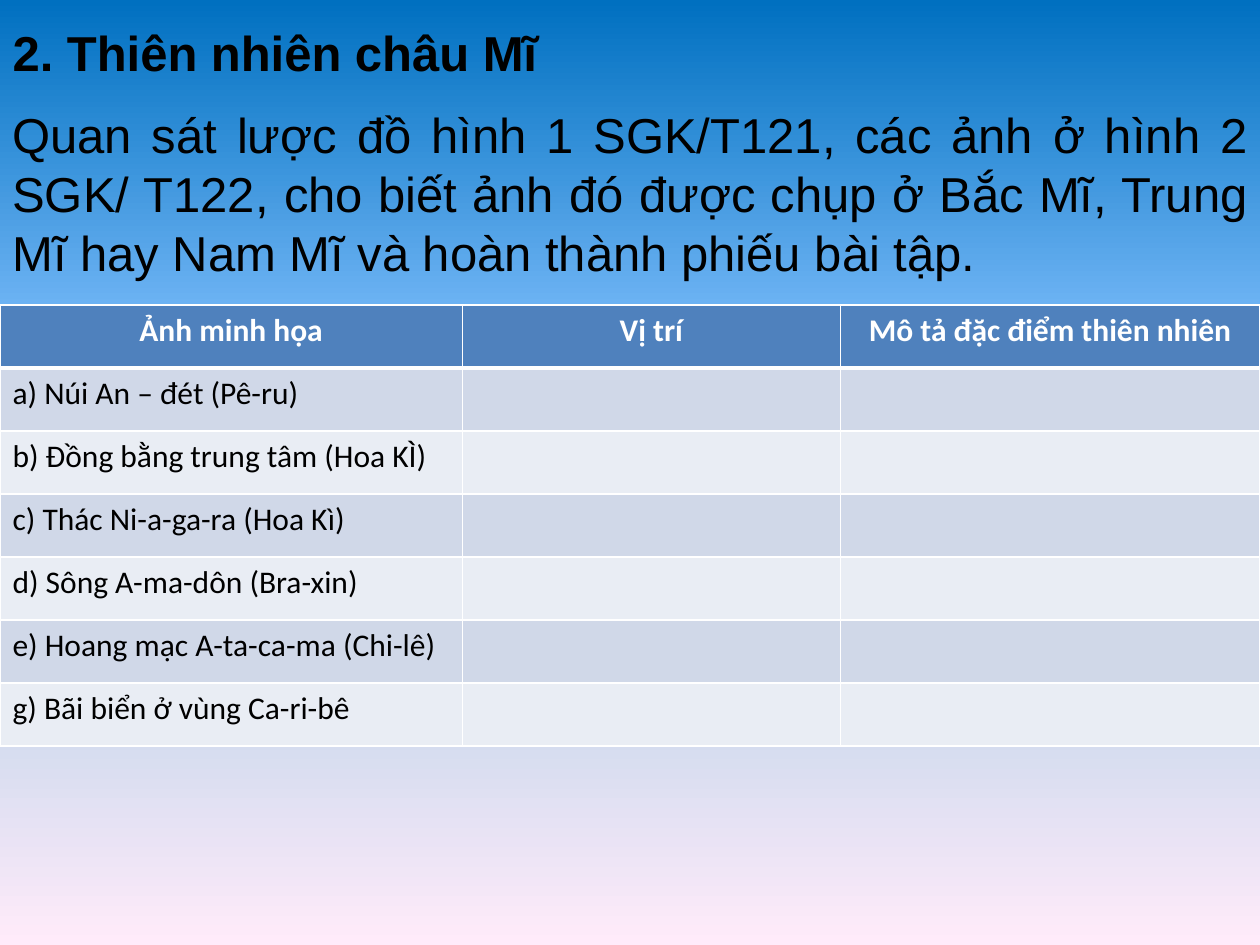
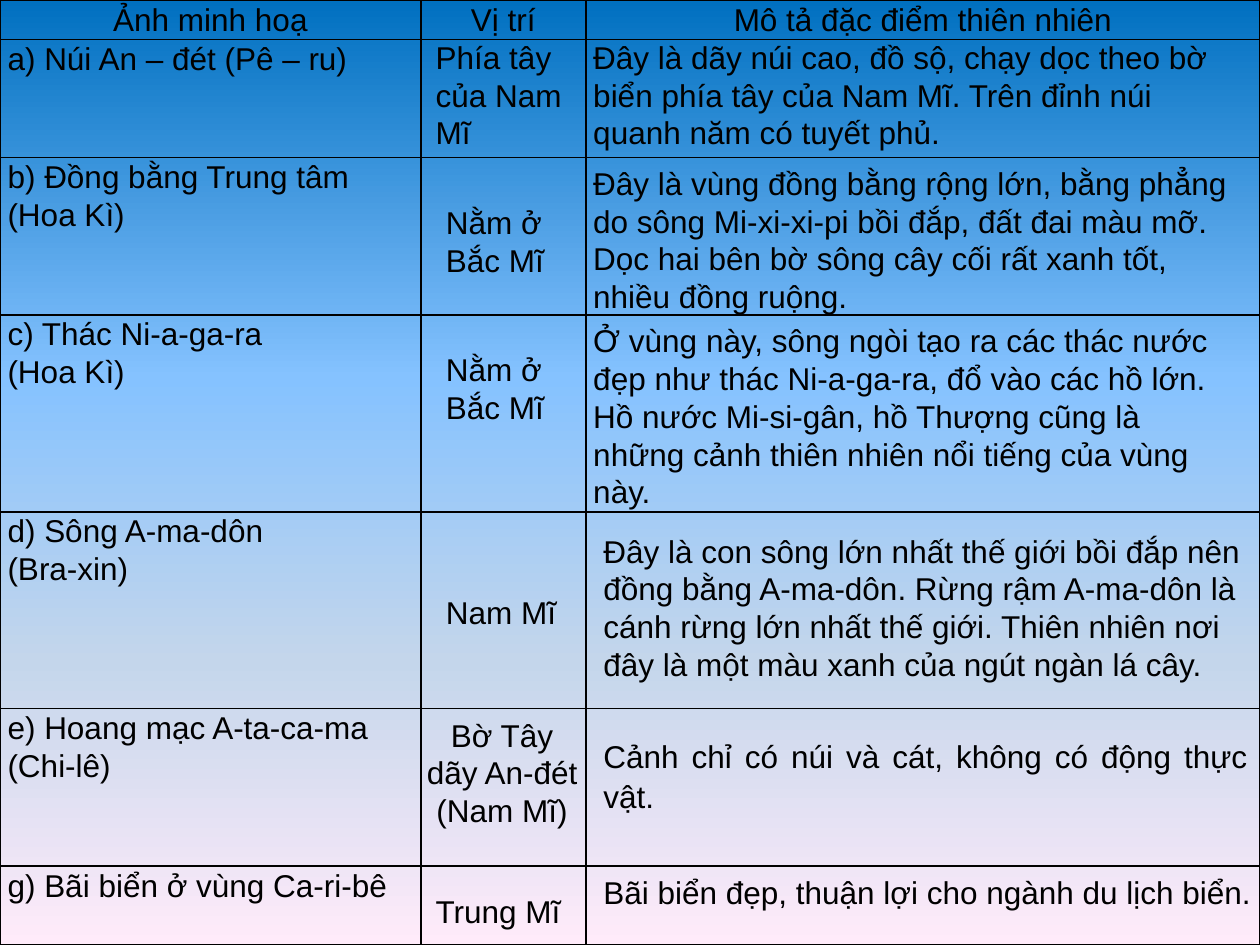
from lxml import etree
from pptx import Presentation
from pptx import util as u
from pptx.dml.color import RGBColor
from pptx.enum import text
from pptx.oxml.ns import qn

COLORS = {
    "ink": "000000",
    "white": "FFFFFF",
    "header": "4F81BD",
    "band_dark": "D0D8E8",
    "band_light": "E9EDF4",
}
BACKGROUND = {0: "0070C0", 40: "85C2FF", 70: "C4D6EB", 100: "FFEBFA"}
LEFT, CENTER, JUSTIFY = (
    text.PP_ALIGN.LEFT, text.PP_ALIGN.CENTER, text.PP_ALIGN.JUSTIFY)


def write(frame, content, size=18, font="Arial", color="ink", bold=False,
          align=LEFT, spacing=None):
    for index, line in enumerate(content.split("\n")):
        para = frame.add_paragraph() if index else frame.paragraphs[0]
        para.alignment = align
        if spacing:
            para.line_spacing = spacing
        span = para.add_run()
        span.text = line
        span.font.size = u.Pt(size)
        span.font.name = font
        span.font.bold = bold
        span.font.color.rgb = RGBColor.from_string(COLORS[color])


class Lesson:
    def __init__(self):
        self.deck = Presentation()
        self.deck.slide_width = u.Inches(10)
        self.deck.slide_height = u.Inches(7.5)
        self.page = None
        self.paint_background()

    def paint_background(self):
        master = self.deck.slide_master
        fill = master.background.fill
        fill.gradient()
        fill.gradient_angle = 270
        stops = master.element.cSld.xpath("./p:bg//a:gsLst")[0]
        for stop in list(stops):
            stops.remove(stop)
        for position, color in BACKGROUND.items():
            stop = etree.SubElement(stops, qn("a:gs"), pos=str(position * 1000))
            etree.SubElement(stop, qn("a:srgbClr"), val=color)

    def add_page(self, layout):
        self.page = self.deck.slides.add_slide(
            self.deck.slide_layouts.get_by_name(layout))

    def title(self, content, left, top, width, height):
        box = self.page.shapes.title
        box.left, box.top = u.Inches(left), u.Inches(top)
        box.width, box.height = u.Inches(width), u.Inches(height)
        self.fill_frame(box.text_frame, content, size=28, bold=True)

    def text_box(self, content, left, top, width, height, **style):
        box = self.page.shapes.add_textbox(
            u.Inches(left), u.Inches(top), u.Inches(width), u.Inches(height))
        self.fill_frame(box.text_frame, content, **style)

    def fill_frame(self, frame, content, **style):
        frame.word_wrap = True
        frame.auto_size = text.MSO_AUTO_SIZE.NONE
        frame.vertical_anchor = text.MSO_ANCHOR.TOP
        write(frame, content, **style)

    def table(self, top, widths, heights):
        frame = self.page.shapes.add_table(
            len(heights), len(widths), 0, u.Inches(top),
            u.Inches(sum(widths)), u.Inches(sum(heights)))
        table = frame.table
        table.first_row = table.horz_banding = False
        for column, width in zip(table.columns, widths):
            column.width = u.Inches(width)
        for row, height in zip(table.rows, heights):
            row.height = u.Inches(height)
        return table

    def cell(self, cell, content, fill=None, border="ink", bottom=1, top=1,
             insets=None, **style):
        if insets:
            cell.margin_left = cell.margin_right = u.Inches(insets[0])
            cell.margin_top = cell.margin_bottom = u.Inches(insets[1])
        properties = cell._tc.get_or_add_tcPr()
        for side, width in {"L": 1, "R": 1, "T": top, "B": bottom}.items():
            line = etree.SubElement(
                properties, qn("a:ln" + side), w=str(u.Pt(width)))
            solid = etree.SubElement(line, qn("a:solidFill"))
            etree.SubElement(solid, qn("a:srgbClr"), val=COLORS[border])
        if fill:
            cell.fill.solid()
            cell.fill.fore_color.rgb = RGBColor.from_string(COLORS[fill])
        else:
            cell.fill.background()
        if content:
            write(cell.text_frame, content, **style)


def worksheet_page(lesson):
    lesson.add_page("Title Only")
    lesson.title("2. Thiên nhiên châu Mĩ", 0, 0.13, 7.73, 0.57)
    lesson.text_box(
        "Quan sát lược đồ hình 1 SGK/T121, các ảnh ở hình 2 SGK/ T122, "
        "cho biết ảnh đó được chụp ở Bắc Mĩ, Trung Mĩ hay Nam Mĩ và hoàn "
        "thành phiếu bài tập.", 0, 0.78, 10, 2.46, size=28, align=JUSTIFY)

    headings = ["Ảnh minh họa", "Vị trí", "Mô tả đặc điểm thiên nhiên"]
    places = [
        "a) Núi An – đét (Pê-ru)",
        "b) Đồng bằng trung tâm (Hoa KÌ)",
        "c) Thác Ni-a-ga-ra (Hoa Kì)",
        "d) Sông A-ma-dôn (Bra-xin)",
        "e) Hoang mạc A-ta-ca-ma (Chi-lê)",
        "g) Bãi biển ở vùng Ca-ri-bê",
    ]
    rows = [headings] + [[place, "", ""] for place in places]
    table = lesson.table(2.42, [3.67, 3, 3.33], [0.5] * len(rows))
    for row, contents in enumerate(rows):
        if row == 0:
            style = dict(fill="header", color="white", bold=True,
                         align=CENTER, bottom=3)
        else:
            style = dict(fill="band_dark" if row % 2 else "band_light",
                         top=3 if row == 1 else 1)
        for column, content in enumerate(contents):
            lesson.cell(table.cell(row, column), content, border="white",
                        font="Calibri", **style)


def answer_page(lesson):
    lesson.add_page("Blank")
    headings = ["Ảnh minh hoạ", "Vị trí", "Mô tả đặc điểm thiên nhiên"]
    places = [
        "a) Núi An – đét (Pê – ru)",
        "b) Đồng bằng Trung tâm (Hoa Kì)",
        "c) Thác Ni-a-ga-ra\n(Hoa Kì)",
        "d) Sông A-ma-dôn\n(Bra-xin)",
        "e) Hoang mạc A-ta-ca-ma (Chi-lê)",
        "g) Bãi biển ở vùng Ca-ri-bê",
    ]
    rows = [headings] + [[place, "", ""] for place in places]
    line_counts = [1, 3, 4, 5, 5, 4, 2]
    line_height = 7.5 / sum(line_counts)
    table = lesson.table(0, [3.34, 1.31, 5.35],
                         [count * line_height for count in line_counts])
    for row, contents in enumerate(rows):
        for column, content in enumerate(contents):
            lesson.cell(table.cell(row, column), content, insets=(0.06, 0),
                        align=LEFT if row else CENTER, spacing=1.07)

    positions = [
        ("Phía tây của Nam Mĩ", 3.36, 0.25, 1.25, 1.31),
        ("Nằm ở Bắc Mĩ", 3.44, 1.56, 1.09, 1.01),
        ("Nằm ở Bắc Mĩ", 3.44, 2.73, 1.25, 1.01),
        ("Nam Mĩ", 3.44, 4.66, 1.17, 0.73),
        ("Trung Mĩ", 3.36, 7.03, 1.33, 0.71),
    ]
    descriptions = [
        ("Đây là dãy núi cao, đồ sộ, chạy dọc theo bờ biển phía tây của "
         "Nam Mĩ. Trên đỉnh núi quanh năm có tuyết phủ.",
         4.61, 0.25, 5.31, 1.31),
        ("Đây là vùng đồng bằng rộng lớn, bằng phẳng do sông Mi-xi-xi-pi "
         "bồi đắp, đất đai màu mỡ. Dọc hai bên bờ sông cây cối rất xanh "
         "tốt, nhiều đồng ruộng.", 4.61, 1.25, 5.23, 1.62),
        ("Ở vùng này, sông ngòi tạo ra các thác nước đẹp như thác "
         "Ni-a-ga-ra, đổ vào các hồ lớn. Hồ nước Mi-si-gân, hồ Thượng cũng "
         "là những cảnh thiên nhiên nổi tiếng của vùng này.",
         4.61, 2.5, 5.31, 1.92),
        ("Đây là con sông lớn nhất thế giới bồi đắp nên đồng bằng A-ma-dôn. "
         "Rừng rậm A-ma-dôn là cánh rừng lớn nhất thế giới. Thiên nhiên nơi "
         "đây là một màu xanh của ngút ngàn lá cây.",
         4.69, 4.17, 5.31, 1.62),
        ("Bãi biển đẹp, thuận lợi cho ngành du lịch biển.",
         4.69, 6.88, 5.55, 0.71),
    ]
    for answer in positions + descriptions:
        lesson.text_box(*answer)
    lesson.text_box("Bờ Tây dãy An-đét (Nam Mĩ)", 3.28, 5.63, 1.41, 1.31,
                    align=CENTER)
    lesson.text_box("Cảnh chỉ có núi và cát, không có động thực vật.",
                    4.69, 5.78, 5.31, 0.73, align=JUSTIFY, spacing=1.07)


def main():
    lesson = Lesson()
    worksheet_page(lesson)
    answer_page(lesson)
    lesson.deck.save("out.pptx")


if __name__ == "__main__":
    main()
